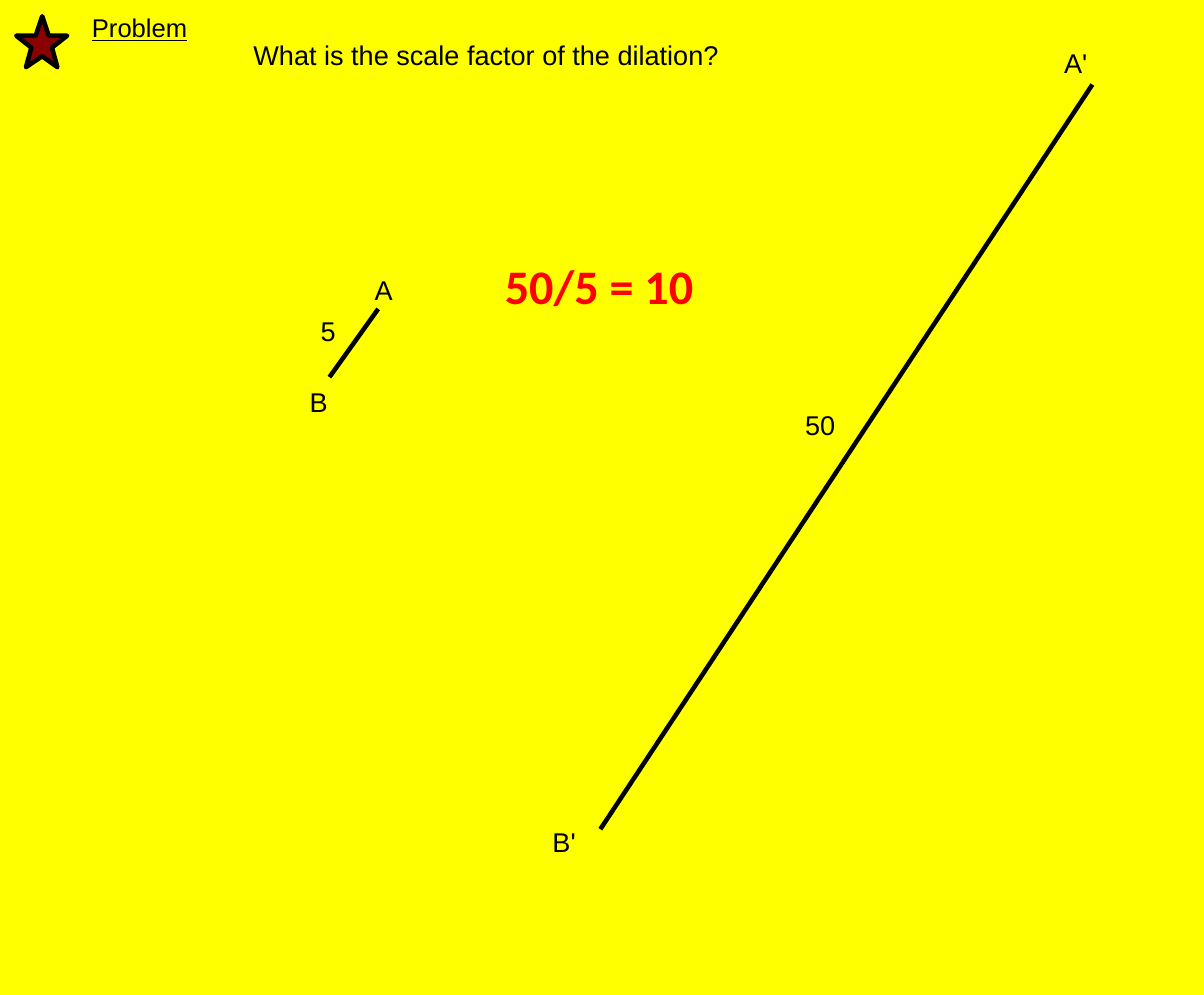
from typing import NamedTuple

from lxml import etree
from pptx import Presentation
from pptx.dml.color import RGBColor
from pptx.enum.shapes import MSO_CONNECTOR
from pptx.oxml.ns import qn
from pptx.slide import Slide
from pptx.util import Pt

EMU_PER_PX = 9144  # 100 px to the inch
YELLOW = RGBColor(0xFF, 0xFF, 0x00)
BLACK = RGBColor(0x00, 0x00, 0x00)
DARK_RED = RGBColor(0x8B, 0x00, 0x00)
RED = RGBColor(0xFF, 0x00, 0x00)
LINE_WIDTH = Pt(3)


class Label(NamedTuple):
    text: str
    left: int
    top: int
    width: int
    height: int = 40
    size: int = 18
    font: str = "Arial"
    color: RGBColor = BLACK
    bold: bool = False
    underline: bool = False


class Segment(NamedTuple):
    x1: int
    y1: int
    x2: int
    y2: int


LABELS = [
    Label("Problem", 75, 6, 167, 39, size=17, underline=True),
    Label("What is the scale factor of the dilation?", 224, 31, 605),
    Label("B", 276, 351, 37),
    Label("A", 336, 247, 37),
    Label("B'", 500, 757, 43),
    Label("A'", 972, 38, 43),
    Label("5", 286, 285, 33),
    Label("50", 733, 372, 52),
    Label("50/5 = 10", 456, 232, 250, 118, size=32, font="Calibri", color=RED, bold=True),
]
SEGMENTS = [Segment(304, 348, 349, 285), Segment(554, 765, 1008, 78)]
STAR = [(39, 15), (45, 33), (62, 33), (48, 44), (53, 62),
        (39, 52), (24, 62), (29, 44), (15, 33), (33, 33)]


def px(n: int) -> int:
    return n * EMU_PER_PX


def add_label(slide: Slide, label: Label) -> None:
    box = slide.shapes.add_textbox(px(label.left), px(label.top), px(label.width), px(label.height))
    tf = box.text_frame
    tf.word_wrap = True
    p = tf.paragraphs[0]
    p.text = label.text
    p.font.name = label.font
    p.font.size = Pt(label.size)
    p.font.color.rgb = label.color
    p.font.bold = label.bold
    p.font.underline = label.underline


def add_segment(slide: Slide, seg: Segment) -> None:
    line = slide.shapes.add_connector(MSO_CONNECTOR.STRAIGHT, *map(px, seg))
    line.line.color.rgb = BLACK
    line.line.width = LINE_WIDTH
    etree.SubElement(line._element.spPr, qn("a:effectLst"))


def add_star(slide: Slide, points: list[tuple[int, int]]) -> None:
    builder = slide.shapes.build_freeform(*points[0], scale=EMU_PER_PX)
    builder.add_line_segments(points[1:], close=True)
    sp = builder.convert_to_shape()
    sp.shadow.inherit = False
    sp.fill.solid()
    sp.fill.fore_color.rgb = DARK_RED
    sp.line.color.rgb = BLACK
    sp.line.width = LINE_WIDTH


def main() -> None:
    prs = Presentation()
    prs.slide_width, prs.slide_height = px(1111), px(918)
    slide = prs.slides.add_slide(prs.slide_layouts[6])

    # Background
    slide.background.fill.solid()
    slide.background.fill.fore_color.rgb = YELLOW

    # Star marker
    add_star(slide, STAR)

    # Segment AB and its dilation A'B'
    for seg in SEGMENTS:
        add_segment(slide, seg)

    # Question, point names, lengths and answer
    for label in LABELS:
        add_label(slide, label)

    prs.save("out.pptx")


if __name__ == "__main__":
    main()
